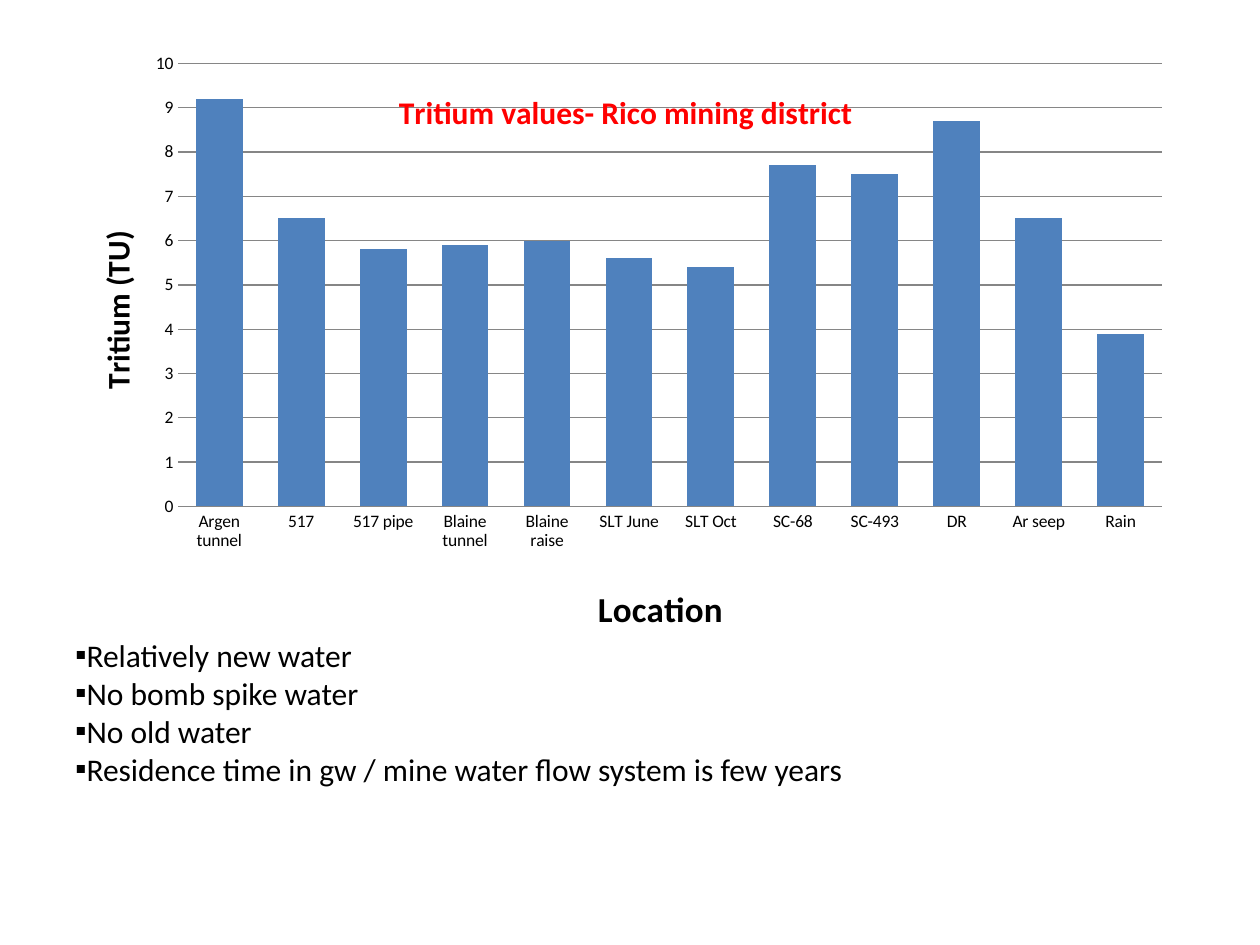
import pptx
import pptx.chart.data
import pptx.dml.color
import pptx.enum.chart
import pptx.enum.text
import pptx.oxml
import pptx.oxml.ns
import pptx.util
from lxml import etree

Pt = pptx.util.Pt
qn = pptx.oxml.ns.qn

# Content
FONT = "Calibri"
TRITIUM = {
    "Argen tunnel": 9.2, "517": 6.5, "517 pipe": 5.8, "Blaine tunnel": 5.9,
    "Blaine raise": 6, "SLT June": 5.6, "SLT Oct": 5.4, "SC-68": 7.7,
    "SC-493": 7.5, "DR": 8.7, "Ar seep": 6.5, "Rain": 3.9,
}
FINDINGS = [
    "Relatively new water",
    "No bomb spike water",
    "No old water",
    "Residence time in gw / mine water flow system is few years",
]
BLACK, RED, BLUE, GREY = "000000", "FF0000", "4F81BD", "868686"


def color(value):
    return pptx.dml.color.RGBColor.from_string(value)


def style_font(font, size, value=BLACK, bold=False):
    font.name, font.size, font.bold = FONT, Pt(size), bold
    font.color.rgb = color(value)


def make_layout(x, y, size=None):
    """Manual layout in fractions of the chart; size also fixes the inner plot."""
    layout = etree.Element(qn("c:layout"))
    manual = etree.SubElement(layout, qn("c:manualLayout"))
    settings = [("xMode", "edge"), ("yMode", "edge"), ("x", x), ("y", y)]
    if size:
        settings.insert(0, ("layoutTarget", "inner"))
        settings += [("w", size[0]), ("h", size[1])]
    for name, value in settings:
        etree.SubElement(manual, qn("c:" + name)).set("val", str(value))
    return layout


def set_title(title, text, size, x, y, value=BLACK, rotation=None):
    frame = title.text_frame
    frame.text = text
    style_font(frame.paragraphs[0].runs[0].font, size, value, bold=True)
    if rotation is not None:
        body = frame._txBody.find(qn("a:bodyPr"))
        body.set("rot", str(rotation * 60000))
        body.set("vert", "horz")
    element = title._element
    for old in element.findall(qn("c:layout")):
        element.remove(old)
    element.find(qn("c:tx")).addnext(make_layout(x, y))


presentation = pptx.Presentation()
presentation.slide_width, presentation.slide_height = Pt(720), Pt(540)
slide = presentation.slides.add_slide(presentation.slide_layouts[6])

# Tritium column chart
data = pptx.chart.data.CategoryChartData()
data.categories = list(TRITIUM)
data.add_series("Series 1", list(TRITIUM.values()))
chart = slide.shapes.add_chart(
    pptx.enum.chart.XL_CHART_TYPE.COLUMN_CLUSTERED,
    Pt(42), Pt(30), Pt(630), Pt(366), data).chart
style_font(chart.font, 10)
chart.has_legend = False
set_title(chart.chart_title, "Tritium values- Rico mining district", 18, 0.29, 0.05, RED)
chart.chart_title.include_in_layout = True

plot_area = chart._chartSpace.chart.plotArea
for old in plot_area.findall(qn("c:layout")):
    plot_area.remove(old)
plot_area.insert(0, make_layout(0.095, 0.017, (0.892, 0.692)))

plot = chart.plots[0]
plot.gap_width, plot.overlap, plot.vary_by_categories = 75, -25, False
fill = plot.series[0].format.fill
fill.solid()
fill.fore_color.rgb = color(BLUE)

# Axes
category_axis, value_axis = chart.category_axis, chart.value_axis
set_title(category_axis.axis_title, "Location", 20, 0.47, 0.82)
set_title(value_axis.axis_title, "Tritium (TU)", 18, 0.015, 0.27, rotation=-90)
for axis in (category_axis, value_axis):
    axis.major_tick_mark = pptx.enum.chart.XL_TICK_MARK.NONE
    axis.minor_tick_mark = pptx.enum.chart.XL_TICK_MARK.NONE
value_axis.minimum_scale, value_axis.maximum_scale, value_axis.major_unit = 0, 10, 1
value_axis.has_major_gridlines = True
value_axis.format.line.fill.background()
for line in (category_axis.format.line, value_axis.major_gridlines.format.line):
    line.color.rgb = color(GREY)
    line.width = Pt(0.75)

# Findings list
frame = slide.shapes.add_textbox(Pt(36), Pt(360), Pt(636), Pt(94.5)).text_frame
frame.word_wrap = True
frame.auto_size = pptx.enum.text.MSO_AUTO_SIZE.SHAPE_TO_FIT_TEXT
frame.text = "\n".join(FINDINGS)
for paragraph in frame.paragraphs:
    properties = paragraph._p.get_or_add_pPr()
    etree.SubElement(properties, qn("a:buFont")).set("typeface", "Wingdings")
    etree.SubElement(properties, qn("a:buChar")).set("char", "▪")
    properties.find(qn("a:buFont")).set("typeface", FONT)
    style_font(paragraph.runs[0].font, 18)

presentation.save("out.pptx")
